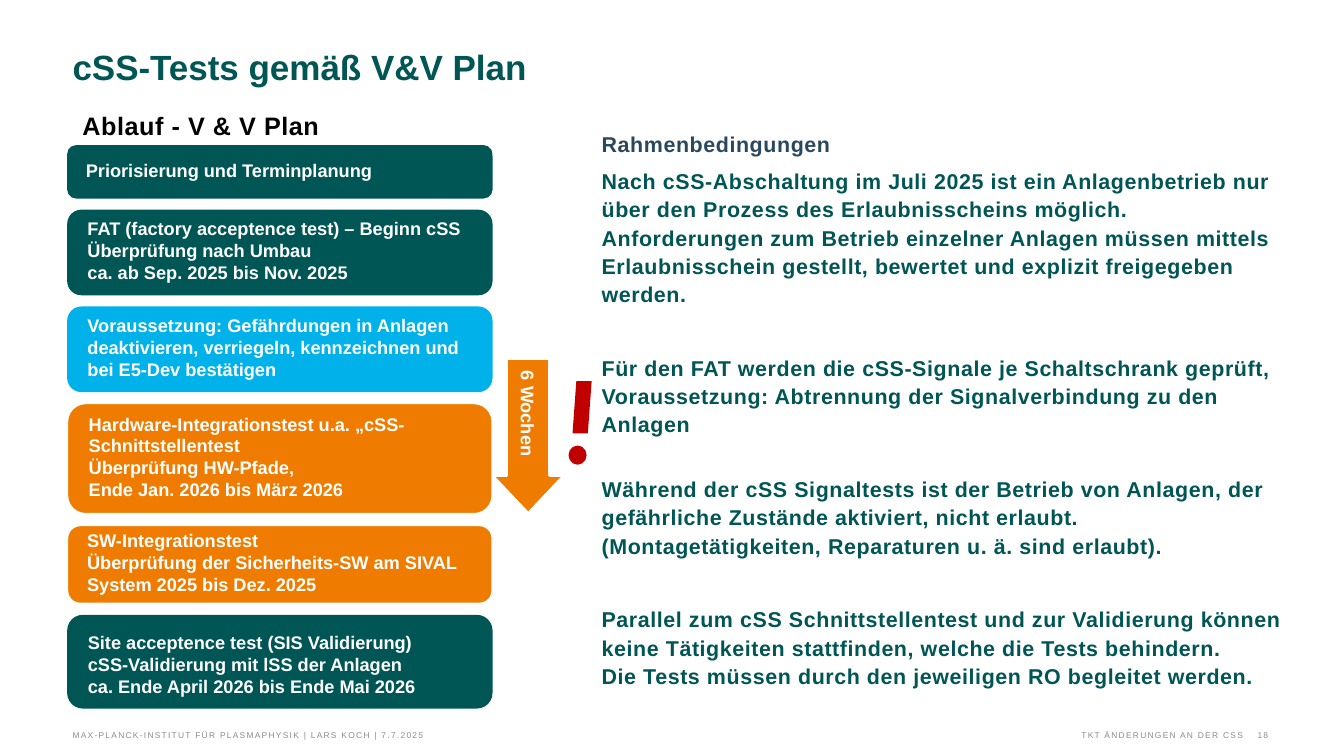
from pptx import Presentation
from pptx.dml.color import RGBColor
from pptx.enum.shapes import MSO_SHAPE as Shape
from pptx.enum.text import MSO_ANCHOR as Anchor, PP_ALIGN as Align
from pptx.util import Emu, Inches, Pt

TEAL = RGBColor(0x00, 0x55, 0x55)
SKY = RGBColor(0x00, 0xB1, 0xEA)
ORANGE = RGBColor(0xEF, 0x7C, 0x00)
RED = RGBColor(0xC0, 0x00, 0x00)
NAVY = RGBColor(0x29, 0x48, 0x5D)
GRAY = RGBColor(0x8C, 0x8C, 0x8C)
BLACK = RGBColor(0x00, 0x00, 0x00)
WHITE = RGBColor(0xFF, 0xFF, 0xFF)

COLUMNS, ROWS = 40, 30
STEP_LEFT, STEP_WIDTH, STEP_TOP, STEP_GAP = 2, 12.66, 5.76, 0.44
MARGIN = 2.16
FOOTER_TOP, FOOTER_HEIGHT = 28.72, 0.64
NO_INSETS = (0, 0, 0, 0)
TEXT_INSETS = (0.1, 0.05, 0.1, 0.05)
STEP_INSETS = (0.16, 0.12, 0.16, 0.16)

STEPS = [
    ("Priorisierung und Terminplanung", 2.12, TEAL, Anchor.MIDDLE),
    ("FAT (factory acceptence test) – Beginn cSS Überprüfung nach Umbau\n"
     "ca. ab Sep. 2025 bis Nov. 2025", 3.4, TEAL, Anchor.MIDDLE),
    ("Voraussetzung: Gefährdungen in Anlagen deaktivieren, verriegeln, kennzeichnen und\n"
     "bei E5-Dev bestätigen", 3.4, SKY, Anchor.MIDDLE),
    ("Hardware-Integrationstest u.a. „cSS-Schnittstellentest\n"
     "Überprüfung HW-Pfade,\nEnde Jan. 2026 bis März 2026", 4.4, ORANGE, Anchor.MIDDLE),
    ("SW-Integrationstest\n"
     "Überprüfung der Sicherheits-SW am SIVAL System 2025 bis Dez. 2025",
     3.12, ORANGE, Anchor.MIDDLE),
    ("Site acceptence test (SIS Validierung)\ncSS-Validierung mit lSS der Anlagen\n"
     "ca. Ende April 2026 bis Ende Mai 2026", 3.72, TEAL, Anchor.TOP),
]

CONDITIONS = [
    ("Rahmenbedingungen", NAVY, 0),
    ("Nach cSS-Abschaltung im Juli 2025 ist ein Anlagenbetrieb nur über den Prozess "
     "des Erlaubnisscheins möglich.\n"
     "Anforderungen zum Betrieb einzelner Anlagen müssen mittels Erlaubnisschein "
     "gestellt, bewertet und explizit freigegeben werden.", TEAL, 6),
    ("Für den FAT werden die cSS-Signale je Schaltschrank geprüft, Voraussetzung: "
     "Abtrennung der Signalverbindung zu den Anlagen", TEAL, 32.5),
    ("Während der cSS Signaltests ist der Betrieb von Anlagen, der gefährliche Zustände "
     "aktiviert, nicht erlaubt. (Montagetätigkeiten, Reparaturen u. ä. sind erlaubt).",
     TEAL, 26),
    ("Parallel zum cSS Schnittstellentest und zur Validierung können keine Tätigkeiten "
     "stattfinden, welche die Tests behindern.\n"
     "Die Tests müssen durch den jeweiligen RO begleitet werden.", TEAL, 32.5),
]

ARROW = [(15.09, 14.24), (16.35, 14.24), (16.35, 18.88), (16.77, 18.88),
         (15.72, 20.36), (14.67, 18.88), (15.09, 18.88)]


def write(para, text, size=13, color=WHITE, bold=True, tracking=0,
          align=Align.LEFT, before=0, spacing=1.0):
    para.text = text
    para.alignment = align
    para.space_before = Pt(before)
    para.line_spacing = spacing
    for span in para.runs:
        font = span.font
        font.name, font.size, font.bold = "Arial", Pt(size), bold
        font.color.rgb = color
        if tracking:
            font._element.set("spc", str(round(tracking * 100)))


class Page:
    def __init__(self, deck):
        self.column = deck.slide_width / COLUMNS
        self.row = deck.slide_height / ROWS
        self.shapes = deck.slides.add_slide(deck.slide_layouts[6]).shapes

    def place(self, left, top, width, height):
        return (Emu(round(left * self.column)), Emu(round(top * self.row)),
                Emu(round(width * self.column)), Emu(round(height * self.row)))

    def frame(self, box, insets, anchor):
        frame = box.text_frame
        frame.word_wrap = True
        frame.vertical_anchor = anchor
        (frame.margin_left, frame.margin_top,
         frame.margin_right, frame.margin_bottom) = map(Inches, insets)
        return frame

    def paint(self, shape, color, outlined=False):
        shape.shadow.inherit = False
        shape.fill.solid()
        shape.fill.fore_color.rgb = color
        if outlined:
            shape.line.color.rgb = WHITE
            shape.line.width = Pt(1.5)
        else:
            shape.line.fill.background()

    def text(self, area, paragraphs, insets=TEXT_INSETS, anchor=Anchor.TOP, **style):
        frame = self.frame(self.shapes.add_textbox(*self.place(*area)), insets, anchor)
        for index, (text, color, before) in enumerate(paragraphs):
            para = frame.add_paragraph() if index else frame.paragraphs[0]
            write(para, text, color=color, before=before, **style)

    def footer(self, left, width, text, align):
        self.text((left, FOOTER_TOP, width, FOOTER_HEIGHT), [(text, GRAY, 0)], NO_INSETS,
                  Anchor.BOTTOM, size=6, bold=False, tracking=0.9, align=align)

    def shape(self, kind, area, color, outlined=False):
        shape = self.shapes.add_shape(kind, *self.place(*area))
        self.paint(shape, color, outlined)
        return shape

    def step(self, top, height, text, color, anchor):
        area = (STEP_LEFT, top, STEP_WIDTH, height)
        box = self.shape(Shape.ROUNDED_RECTANGLE, area, color, color == ORANGE)
        write(self.frame(box, STEP_INSETS, anchor).paragraphs[0], text)

    def arrow(self, points, text, color):
        corners = [self.place(x, y, 0, 0)[:2] for x, y in points]
        builder = self.shapes.build_freeform(*corners[0])
        builder.add_line_segments(corners[1:], close=True)
        arrow = builder.convert_to_shape()
        self.paint(arrow, color, outlined=True)
        frame = self.frame(arrow, STEP_INSETS, Anchor.MIDDLE)
        frame._txBody.bodyPr.set("vert", "vert")
        write(frame.paragraphs[0], text)


def main():
    deck = Presentation()
    deck.slide_width, deck.slide_height = Inches(13.33), Inches(7.5)
    page = Page(deck)

    page.footer(13.29, 23.7, "TKT ÄNDERUNGEN AN DER CSS", Align.RIGHT)
    page.footer(MARGIN, 20.07,
                "MAX-PLANCK-INSTITUT FÜR PLASMAPHYSIK | LARS KOCH | 7.7.2025", Align.LEFT)
    page.footer(37.02, 0.72, "18", Align.RIGHT)

    page.text((MARGIN, 1.92, 31.53, 3.44), [("cSS-Tests gemäß V&V Plan", TEAL, 0)],
              NO_INSETS, size=25, spacing=Pt(28))
    page.text((17.61, 4.92, 21.42, 23.36), CONDITIONS, size=15.3, tracking=0.4, spacing=1.1)
    page.text((MARGIN, 3.96, 13.5, 24.28), [("Ablauf - V & V Plan", BLACK, 0)],
              size=18, tracking=0.4, spacing=1.2)

    top = STEP_TOP
    for text, height, color, anchor in STEPS:
        page.step(top, height, text, color, anchor)
        top += height + STEP_GAP

    page.arrow(ARROW, "6 Wochen", ORANGE)
    page.shape(Shape.FLOWCHART_DATA, (17.04, 15.12, 0.57, 2.08), RED)
    page.shape(Shape.OVAL, (16.92, 17.68, 0.54, 0.76), RED)

    deck.save("out.pptx")


if __name__ == "__main__":
    main()
